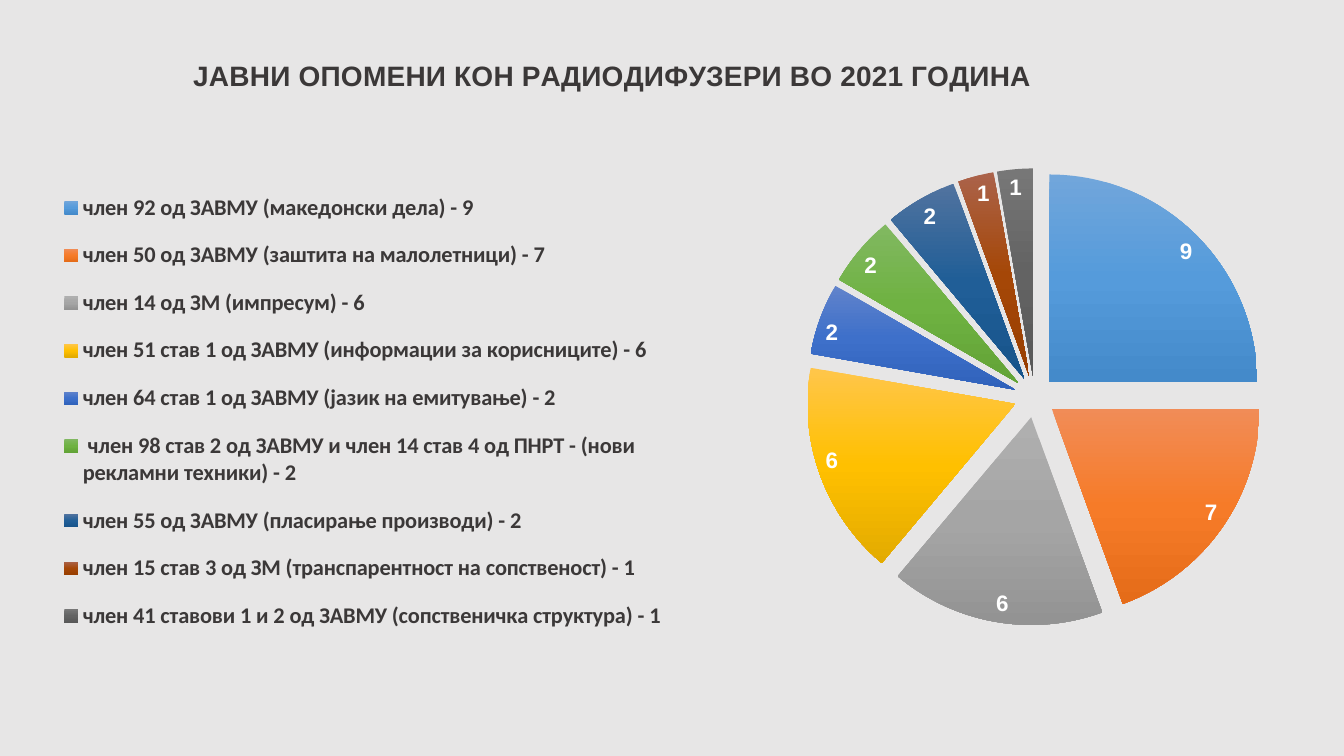
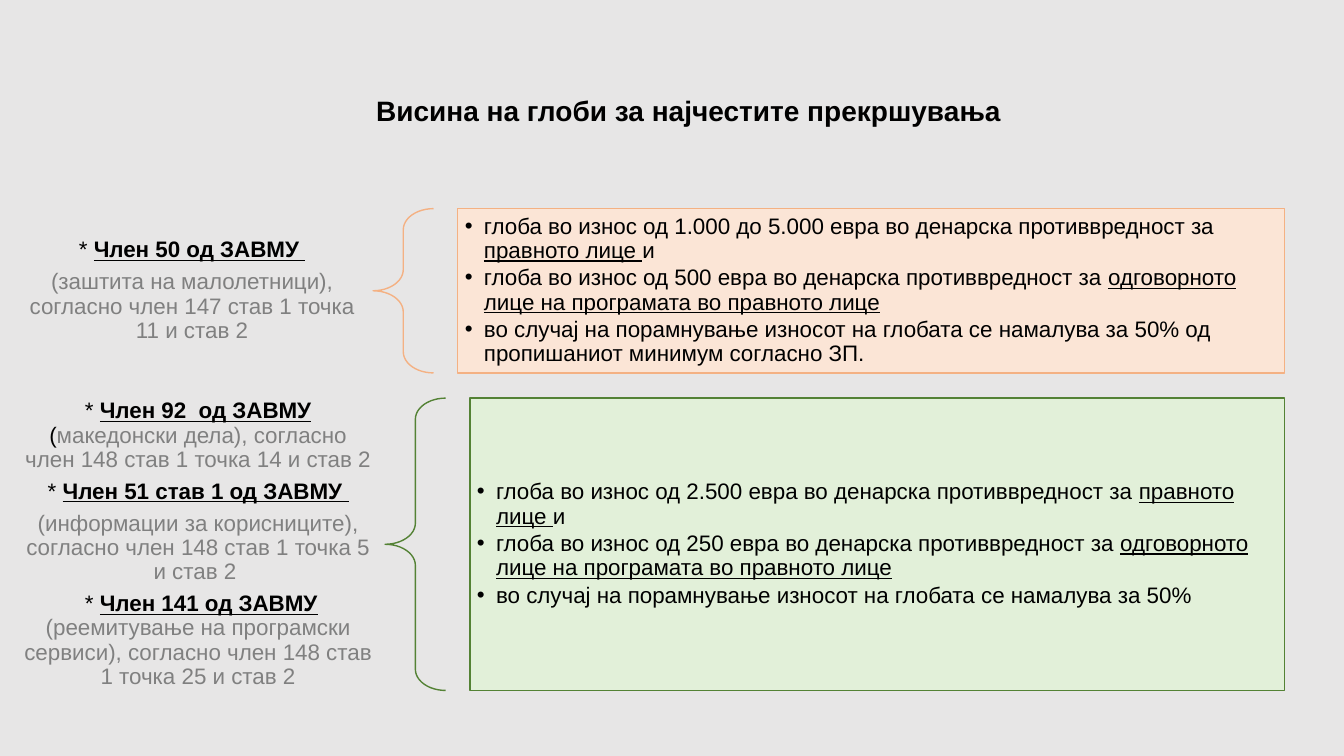
from copy import deepcopy

from pptx import Presentation
from pptx.chart.data import CategoryChartData
from pptx.dml.color import RGBColor
from pptx.enum.chart import XL_CHART_TYPE, XL_LABEL_POSITION, XL_LEGEND_POSITION
from pptx.enum.shapes import MSO_SHAPE
from pptx.enum.text import MSO_ANCHOR, PP_ALIGN
from pptx.oxml import parse_xml
from pptx.oxml.ns import nsdecls, qn
from pptx.util import Inches, Pt

BACKGROUND = RGBColor(0xE7, 0xE6, 0xE6)
DARK = RGBColor(0x3B, 0x38, 0x38)
BLACK = RGBColor(0, 0, 0)
WHITE = RGBColor(0xFF, 0xFF, 0xFF)
GREY = RGBColor(0x80, 0x80, 0x80)
ORANGE_LINE = RGBColor(0xF4, 0xB1, 0x83)
ORANGE_FILL = RGBColor(0xFB, 0xE5, 0xD6)
GREEN_LINE = RGBColor(0x54, 0x82, 0x35)
GREEN_FILL = RGBColor(0xE2, 0xF0, 0xD9)

TITLE = {"name": "Arial", "size": Pt(20), "bold": True}
BODY = {"name": "Arial", "size": Pt(16)}
LEGEND = {"name": "Calibri", "size": Pt(16), "bold": True}
PLAIN = {}
ARTICLE = {"bold": True, "underline": True}
UNDERLINED = {"underline": True}
MUTED = {"color": GREY}

WARNINGS = [
    ("член 92 од ЗАВМУ (македонски дела) - 9", 9, "71A6DB 559BDB 448ACA"),
    ("член 50 од ЗАВМУ (заштита на малолетници) - 7", 7, "F18C57 F67B28 E56C19"),
    ("член 14 од ЗМ (импресум) - 6", 6, "AFAFAF A5A5A5 939393"),
    ("член 51 став 1 од ЗАВМУ (информации за корисниците) - 6", 6,
     "FFC64B FFC000 E3AB00"),
    ("член 64 став 1 од ЗАВМУ (јазик на емитување) - 2", 2, "6183CB 3E70CA 3062BB"),
    (" член 98 став 2 од ЗАВМУ и член 14 став 4 од ПНРТ - (нови рекламни техники) - 2",
     2, "81B861 6FB242 62A336"),
    ("член 55 од ЗАВМУ (пласирање производи) - 2", 2, "51739F 205E97 17548B"),
    ("член 15 став 3 од ЗМ (транспарентност на сопственост) - 1", 1,
     "AB634B A54707 983E00"),
    ("член 41 ставови 1 и 2 од ЗАВМУ (сопственичка структура) - 1", 1,
     "777777 636363 585858"),
]

MINORS_ARTICLES = [
    [("* ", PLAIN), ("Член 50 од ЗАВМУ ", ARTICLE)],
    [("(заштита на малолетници), согласно член 147 став 1 точка 11 и став 2", MUTED)],
]
OTHER_ARTICLES = [
    [("* ", PLAIN), ("Член 92  од ЗАВМУ ", ARTICLE), ("(", PLAIN),
     ("македонски дела), согласно член 148 став 1 точка 14 и став 2 ", MUTED)],
    [("* ", PLAIN), ("Член 51 став 1 од ЗАВМУ ", ARTICLE)],
    [("(информации за корисниците), согласно член 148 став 1 точка 5 и став 2 ", MUTED)],
    [(" * ", PLAIN), ("Член 141 од ЗАВМУ ", ARTICLE),
     ("(реемитување на програмски сервиси), согласно член 148 став 1 точка 25 и став 2",
      MUTED)],
]


def fine_terms(company_fine, person_fine, settlement):
    """Return the three bullet paragraphs that describe a fine."""
    lead, value = "глоба во износ од ", " евра во денарска противвредност за "
    return [
        [(lead + company_fine + value, PLAIN), ("правното лице ", UNDERLINED), ("и", PLAIN)],
        [(lead + person_fine + value, PLAIN),
         ("одговорното лице на програмата во правното лице", UNDERLINED)],
        [("во случај на порамнување износот на глобата се намалува за 50%" + settlement,
          PLAIN)],
    ]


def style_font(font, formats, color):
    """Apply a dict of format values and a colour to a font."""
    for name, value in formats.items():
        if name != "color":
            setattr(font, name, value)
    font.color.rgb = formats.get("color", color)


def add_slide(prs):
    """Add a blank slide with the shared background."""
    s = prs.slides.add_slide(prs.slide_layouts[6])
    s.background.fill.solid()
    s.background.fill.fore_color.rgb = BACKGROUND
    return s


def write_text(sp, paragraphs, base, insets, space_after, align=PP_ALIGN.CENTER, bullet=False):
    """Fill a shape with paragraphs made of styled runs."""
    tf = sp.text_frame
    tf.word_wrap = True
    tf.vertical_anchor = MSO_ANCHOR.MIDDLE
    tf.margin_left = tf.margin_right = Inches(insets[0])
    tf.margin_top = tf.margin_bottom = Inches(insets[1])
    for i, runs in enumerate(paragraphs):
        p = tf.add_paragraph() if i else tf.paragraphs[0]
        p.alignment, p.line_spacing, p.space_after = align, 0.9, space_after
        if bullet:
            pPr = p._p.get_or_add_pPr()
            pPr.set("marL", str(Inches(0.19)))
            pPr.set("indent", str(Inches(-0.19)))
            pPr.append(parse_xml(f'<a:buFont {nsdecls("a")} typeface="Arial"/>'))
            pPr.append(parse_xml(f'<a:buChar {nsdecls("a")} char="•"/>'))
        for text, formats in runs:
            r = p.add_run()
            r.text = text
            style_font(r.font, {**base, **formats}, BLACK)


def add_box(s, kind, box, line, fill=None):
    """Add an outlined shape, filled when a fill colour is given."""
    sp = s.shapes.add_shape(kind, *map(Inches, box))
    sp.shadow.inherit = False
    sp.line.color.rgb = line
    sp.line.width = Pt(1)
    if fill:
        sp.fill.solid()
        sp.fill.fore_color.rgb = fill
    else:
        sp.fill.background()
    return sp


def place(element, index, **fractions):
    """Give a chart part a manual layout in fractions of the chart."""
    for old in element.findall(qn("c:layout")):
        element.remove(old)
    target = '<c:layoutTarget val="inner"/>' if element.tag == qn("c:plotArea") else ""
    modes = "".join(f'<c:{k}Mode val="edge"/>' for k in "xy")
    values = "".join(f'<c:{k} val="{v}"/>' for k, v in fractions.items())
    element.insert(index, parse_xml(
        f'<c:layout {nsdecls("c")}><c:manualLayout>{target}{modes}{values}'
        '</c:manualLayout></c:layout>'))


def color_slices(series):
    """Explode the pie and give each slice its vertical gradient."""
    ser = series._element
    for i, (_, _, colors) in enumerate(WARNINGS):
        fill = series.points[i].format.fill
        fill.gradient()
        fill.gradient_angle = 270
        stops = ser.xpath("c:dPt[last()]//a:gsLst")[0]
        stops.insert(1, deepcopy(stops[0]))
        for stop, position, color in zip(fill.gradient_stops, (0, 0.5, 1), colors.split()):
            stop.position = position
            stop.color.rgb = RGBColor.from_string(color)
    ser.find(qn("c:dPt")).addprevious(
        parse_xml(f'<c:explosion {nsdecls("c")} val="10"/>'))


def add_warnings_chart(s, box):
    """Add the pie of public warnings with its title and legend."""
    data = CategoryChartData()
    data.categories = [name for name, _, _ in WARNINGS]
    data.add_series("Series 1", [value for _, value, _ in WARNINGS])
    chart = s.shapes.add_chart(XL_CHART_TYPE.PIE, *map(Inches, box), data).chart
    style_font(chart.font, {"name": "Calibri", "size": Pt(10)}, BLACK)
    space = chart._chartSpace
    space.find(qn("c:chart")).addnext(parse_xml(
        f'<c:spPr {nsdecls("c", "a")}><a:solidFill><a:srgbClr val="{BACKGROUND}"/>'
        '</a:solidFill><a:ln><a:noFill/></a:ln></c:spPr>'))

    chart.has_title = True
    p = chart.chart_title.text_frame.paragraphs[0]
    r = p.add_run()
    r.text = "ЈАВНИ ОПОМЕНИ КОН РАДИОДИФУЗЕРИ ВО 2021 ГОДИНА"
    style_font(r.font, TITLE, DARK)

    chart.has_legend = True
    chart.legend.position = XL_LEGEND_POSITION.BOTTOM
    chart.legend.include_in_layout = False
    style_font(chart.legend.font, LEGEND, DARK)

    plot = chart.plots[0]
    plot.vary_by_categories = True
    plot.has_data_labels = True
    labels = plot.data_labels
    labels.show_value, labels.show_percentage = True, False
    labels.position = XL_LABEL_POSITION.INSIDE_END
    style_font(labels.font, {**BODY, "bold": True}, WHITE)
    color_slices(plot.series[0])

    place(space.xpath("c:chart/c:title")[0], 1, x=0.14, y=0.07)
    place(space.xpath("c:chart/c:legend")[0], 1, x=0.04, y=0.23, w=0.46, h=0.63)
    place(space.xpath("c:chart/c:plotArea")[0], 0, x=0.6, y=0.22, w=0.34, h=0.61)


def add_title(s, box, text):
    """Add a centred slide title."""
    sp = s.shapes.add_textbox(*map(Inches, box))
    write_text(sp, [[(text, PLAIN)]], TITLE, (0.1, 0.05), Pt(0))


def add_fine_row(s, box, label_width, articles, terms, line, fill):
    """Add articles, a brace and a panel of fine terms inside a box."""
    left, top, width, height = box
    sp = s.shapes.add_textbox(*map(Inches, (left, top, label_width, height)))
    write_text(sp, articles, BODY, (0.12, 0.04), Pt(5.6))
    brace = add_box(s, MSO_SHAPE.LEFT_BRACE, (left + label_width, top, 0.6, height), line)
    brace.adjustments[0], brace.adjustments[1] = 0.35, 0.5
    offset = label_width + 0.84
    panel = add_box(s, MSO_SHAPE.RECTANGLE,
                    (left + offset, top, width - offset, height), line, fill)
    write_text(panel, terms, BODY, (0.07, 0.07), Pt(2.4), PP_ALIGN.LEFT, bullet=True)


def main():
    """Build and save the presentation."""
    prs = Presentation()
    prs.slide_width, prs.slide_height = Inches(13.33), Inches(7.5)

    add_warnings_chart(add_slide(prs), (0, 0, 13.33, 7.5))

    s = add_slide(prs)
    add_title(s, (1.08, 0.39, 11.5, 1.45), "Висина на глоби за најчестите прекршувања")
    add_fine_row(s, (0.11, 2.07, 12.63, 1.63), 3.59, MINORS_ARTICLES,
                 fine_terms("1.000 до 5.000", "500", " од пропишаниот минимум согласно ЗП."),
                 ORANGE_LINE, ORANGE_FILL)
    add_fine_row(s, (0.11, 3.95, 12.63, 2.9), 3.71, OTHER_ARTICLES,
                 fine_terms("2.500", "250", ""), GREEN_LINE, GREEN_FILL)
    prs.save("out.pptx")


if __name__ == "__main__":
    main()
